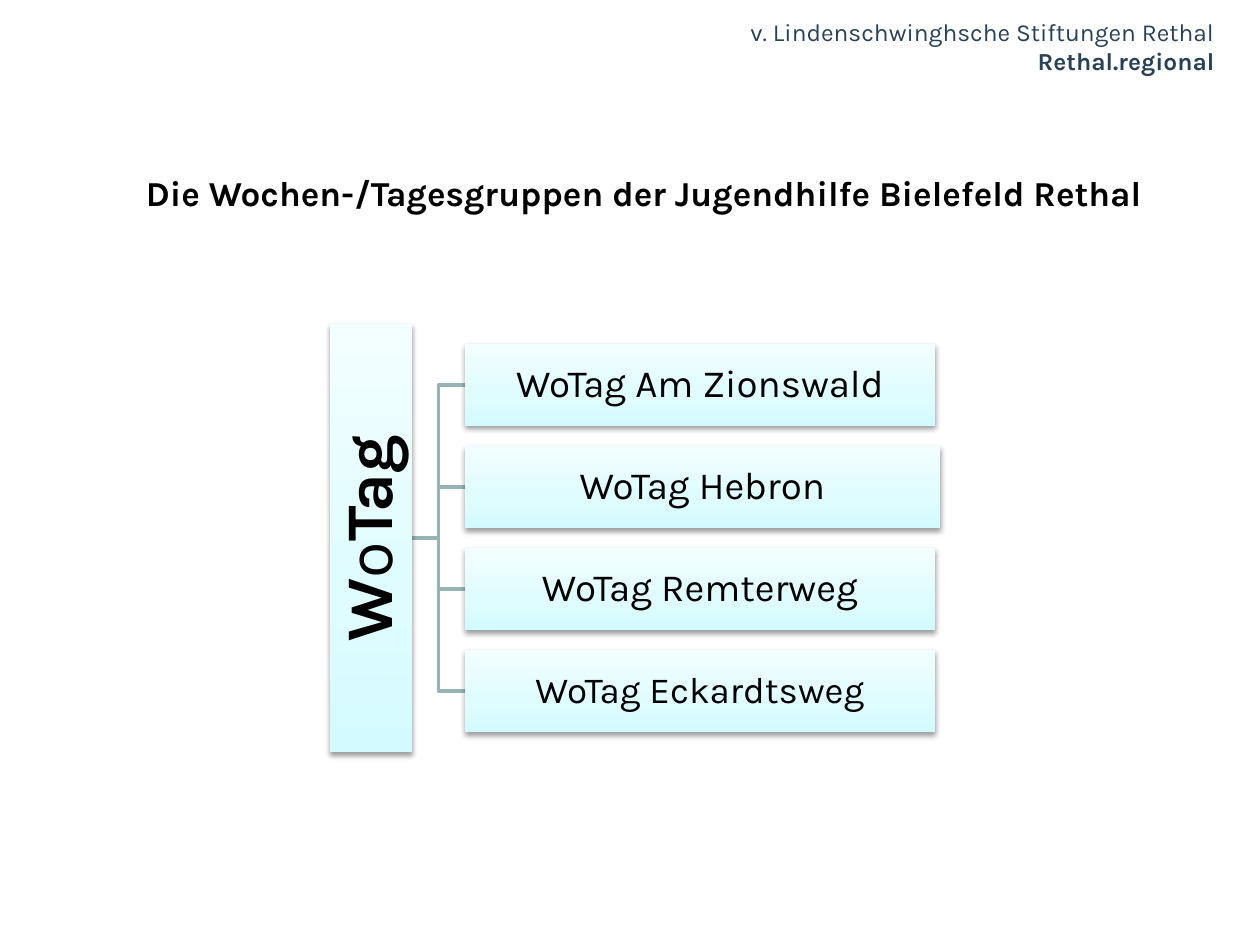
from dataclasses import dataclass

from lxml.etree import SubElement
from pptx import Presentation
from pptx.dml.color import RGBColor
from pptx.enum.shapes import MSO_SHAPE
from pptx.enum.text import MSO_ANCHOR, PP_ALIGN
from pptx.oxml.ns import qn
from pptx.util import Inches, Pt


@dataclass(frozen=True)
class Theme:
    """Fonts, colours and type sizes of the slide."""

    font: str = "Karla"
    ink: str = "000000"
    header: str = "284156"
    line: str = "96B3B6"
    gradient: tuple = ((0, "D3FBFF"), (35, "DFFCFF"), (100, "F2FEFF"))
    header_size: int = 14
    title_size: int = 20
    root_size: int = 38


THEME = Theme()
GROUPS = (
    ("WoTag Am Zionswald", 3.73, 22),
    ("WoTag Hebron", 3.77, 22),
    ("WoTag Remterweg", 3.73, 22),
    ("WoTag Eckardtsweg", 3.73, 21),
)


def style_paragraph(paragraph, size, color, alignment, bold=None):
    """Set the font and alignment of a paragraph."""
    paragraph.alignment = alignment
    font = paragraph.font
    font.name = THEME.font
    font.size = Pt(size)
    font.bold = bold
    font.color.rgb = RGBColor.from_string(color)


def set_margins(frame, margin):
    """Give a text frame the same margin on all sides."""
    frame.margin_left = frame.margin_right = Inches(margin)
    frame.margin_top = frame.margin_bottom = Inches(margin)


def add_header(slide, left, top, width, height):
    """Place the two right-aligned lines of the organisation name."""
    frame = slide.shapes.add_textbox(
        Inches(left), Inches(top), Inches(width), Inches(height)).text_frame
    frame.word_wrap = True
    frame.vertical_anchor = MSO_ANCHOR.BOTTOM
    set_margins(frame, 0)
    frame.text = "v. Lindenschwinghsche Stiftungen Rethal\nRethal.regional"
    for paragraph, bold in zip(frame.paragraphs, (False, True)):
        style_paragraph(paragraph, THEME.header_size, THEME.header, PP_ALIGN.RIGHT, bold)


def add_title(slide, left, top, width, height):
    """Place the bold slide title."""
    frame = slide.shapes.add_textbox(
        Inches(left), Inches(top), Inches(width), Inches(height)).text_frame
    frame.word_wrap = True
    frame.text = "Die Wochen-/Tagesgruppen der Jugendhilfe Bielefeld Rethal"
    style_paragraph(frame.paragraphs[0], THEME.title_size, THEME.ink, PP_ALIGN.LEFT, True)


def add_card(slide, left, top, width, height, runs, size, margin):
    """Place a shaded rectangle with centred text made of (text, bold) runs."""
    shape = slide.shapes.add_shape(
        MSO_SHAPE.RECTANGLE, Inches(left), Inches(top), Inches(width), Inches(height))
    shape.line.fill.background()
    shape.fill.gradient()
    shape.fill.gradient_angle = 90
    stops = shape._element.spPr.find(".//" + qn("a:gsLst"))
    for stop in list(stops):
        stops.remove(stop)
    for position, color in THEME.gradient:
        stop = SubElement(stops, qn("a:gs"), pos=str(position * 1000))
        SubElement(stop, qn("a:srgbClr"), val=color)

    shape.shadow.inherit = False
    effects = shape._element.spPr.find(qn("a:effectLst"))
    shadow = SubElement(
        effects, qn("a:outerShdw"), blurRad=str(Pt(3.1)), dist=str(Pt(1.6)),
        dir="5400000", rotWithShape="0")
    shadow_color = SubElement(shadow, qn("a:srgbClr"), val=THEME.ink)
    SubElement(shadow_color, qn("a:alpha"), val="38000")

    frame = shape.text_frame
    frame.word_wrap = True
    frame.vertical_anchor = MSO_ANCHOR.MIDDLE
    set_margins(frame, margin)
    paragraph = frame.paragraphs[0]
    style_paragraph(paragraph, size, THEME.ink, PP_ALIGN.CENTER)
    paragraph.line_spacing = 0.9
    for text, bold in runs:
        run = paragraph.add_run()
        run.text = text
        run.font.bold = bold
    return shape


def add_branch(slide, start_x, start_y, end_x, end_y):
    """Draw an elbow line that bends halfway between its ends."""
    middle_x = (start_x + end_x) / 2
    builder = slide.shapes.build_freeform(Inches(start_x), Inches(start_y))
    builder.add_line_segments(
        [(Inches(x), Inches(y)) for x, y in
         ((middle_x, start_y), (middle_x, end_y), (end_x, end_y))],
        close=False)
    branch = builder.convert_to_shape()
    branch.fill.background()
    branch.line.color.rgb = RGBColor.from_string(THEME.line)
    branch.line.width = Pt(2)
    branch.shadow.inherit = False


def add_hierarchy(slide, left, top, height):
    """Place the upright root card, its branches and the group cards."""
    card_height, pitch, gap = 0.65, 0.81, 0.42
    center_y = top + height / 2
    root_right = left + card_height
    card_left = root_right + gap
    first_top = center_y - ((len(GROUPS) - 1) * pitch + card_height) / 2
    tops = [first_top + index * pitch for index in range(len(GROUPS))]

    for card_top in reversed(tops):
        add_branch(slide, root_right, center_y, card_left, card_top + card_height / 2)

    root = add_card(
        slide, left + (card_height - height) / 2, center_y - card_height / 2,
        height, card_height, (("W", True), ("o", False), ("Tag", True)),
        THEME.root_size, 0.03)
    root.rotation = 270
    root._element.spPr.find(qn("a:gradFill")).set("rotWithShape", "0")

    for card_top, (name, width, size) in zip(tops, GROUPS):
        add_card(slide, card_left, card_top, width, card_height,
                 ((name, False),), size, 0.02)


def main():
    """Build and save the slide."""
    presentation = Presentation()
    presentation.slide_width = Inches(10)
    presentation.slide_height = Inches(7.5)
    slide = presentation.slides.add_slide(presentation.slide_layouts[6])
    add_header(slide, 4.13, 0.1, 5.51, 0.5)
    add_title(slide, 1.06, 1.31, 8.27, 0.44)
    add_hierarchy(slide, 2.62, 2.57, 3.4)
    presentation.save("out.pptx")


if __name__ == "__main__":
    main()
